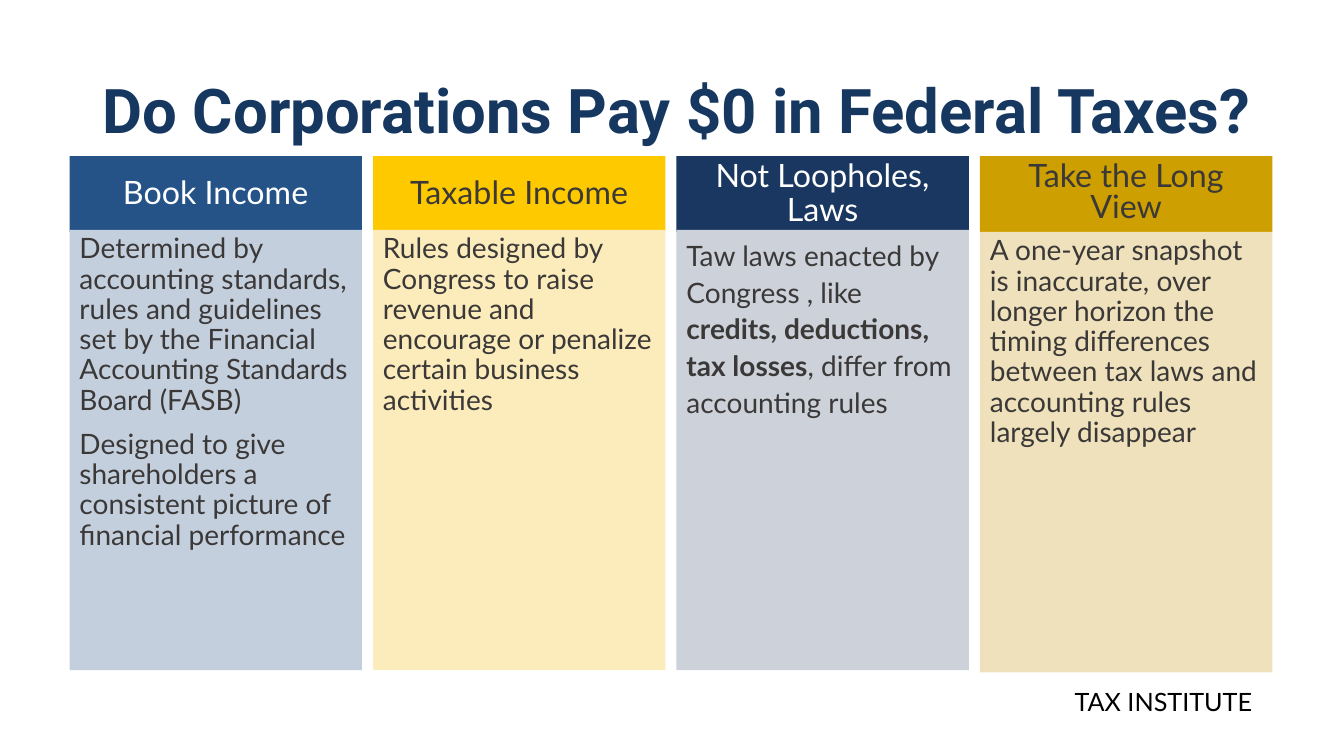
import pptx
import pptx.dml.color
import pptx.enum.shapes
import pptx.enum.text
import pptx.util

Inches = pptx.util.Inches
ALIGN = pptx.enum.text.PP_ALIGN
ANCHOR = pptx.enum.text.MSO_ANCHOR
DARK, WHITE = "3B3838", "FFFFFF"


def paint(target, color):
    """Give a fill or a font a solid colour."""
    if hasattr(target, "solid"):
        target.solid()
        target.fore_color.rgb = pptx.dml.color.RGBColor.from_string(color)
    else:
        target.color.rgb = pptx.dml.color.RGBColor.from_string(color)


def write(shape, paras, face, size, color, align, anchor, space=None):
    """Fill a shape with paragraphs, each a list of (text, bold) runs."""
    frame = shape.text_frame
    frame.word_wrap = True
    frame.vertical_anchor = anchor
    for i, runs in enumerate(paras):
        para = frame.paragraphs[0] if i == 0 else frame.add_paragraph()
        para.alignment = align
        para.line_spacing = space
        if i > 0:
            para.space_before = pptx.util.Pt(10)
        for text, bold in runs:
            run = para.add_run()
            run.text = text
            if bold:
                run.font.bold = True
        para.font.name = face
        para.font.size = pptx.util.Pt(size)
        paint(para.font, color)


deck = pptx.Presentation()
deck.slide_width, deck.slide_height = Inches(13.33), Inches(7.5)
slide = deck.slides.add_slide(deck.slide_layouts[6])

footer = slide.shapes.add_textbox(Inches(9.57), Inches(6.76), Inches(2.85), Inches(0.4))
footer.text_frame.margin_left = footer.text_frame.margin_right = 0
write(footer, [[("TAX INSTITUTE", False)]], "Lato", 18, "000000", ALIGN.RIGHT, ANCHOR.TOP)

title = slide.shapes.add_textbox(Inches(0.92), Inches(0.4), Inches(12.07), Inches(1.45))
write(title, [[("Do Corporations Pay $0 in Federal Taxes?", True)]],
      "Roboto", 44, "163860", ALIGN.LEFT, ANCHOR.MIDDLE, 0.9)

# heading, heading fill, heading colour, heading spacing, body fill, body top, body spacing, body
columns = [
    ("Book Income", "255387", WHITE, 0.9, "C4CFDD", 2.28, 0.9, [
        [("Determined by accounting standards, rules and guidelines set by "
          "the Financial Accounting Standards Board (FASB)", False)],
        [("Designed to give shareholders a consistent picture of "
          "financial performance", False)]]),
    ("Taxable Income", "FFC900", DARK, 0.9, "FCECBC", 2.28, 0.9, [
        [("Rules designed by Congress to raise revenue and encourage or "
          "penalize certain business activities", False)]]),
    ("Not Loopholes, Laws", "193761", WHITE, 0.9, "CCD1DA", 2.28, 1.1, [
        [("Taw laws enacted by Congress , like ", False),
         ("credits, deductions, tax losses", True),
         (", differ from accounting rules", False)]]),
    ("Take the Long View", "CD9F00", DARK, 0.8, "EFE1BB", 2.3, 0.9, [
        [("A one-year snapshot is inaccurate, over longer horizon the timing "
          "differences between tax laws and accounting rules largely disappear", False)]]),
]

for i, (name, shade, ink, lead, tint, top, space, body) in enumerate(columns):
    left = 0.69 + 3.01 * i
    parts = [
        (1.55, 0.75, shade, [[(name, False)]], 23, ink, ALIGN.CENTER, ANCHOR.MIDDLE, lead),
        (top, 4.37, tint, body, 20, DARK, ALIGN.LEFT, ANCHOR.TOP, space),
    ]
    for y, height, fill, paras, size, color, align, anchor, gap in parts:
        box = slide.shapes.add_shape(pptx.enum.shapes.MSO_SHAPE.RECTANGLE,
                                     Inches(left), Inches(y), Inches(2.9), Inches(height))
        box.shadow.inherit = False
        box.line.fill.background()
        paint(box.fill, fill)
        write(box, paras, "Lato", size, color, align, anchor, gap)

deck.save("out.pptx")
